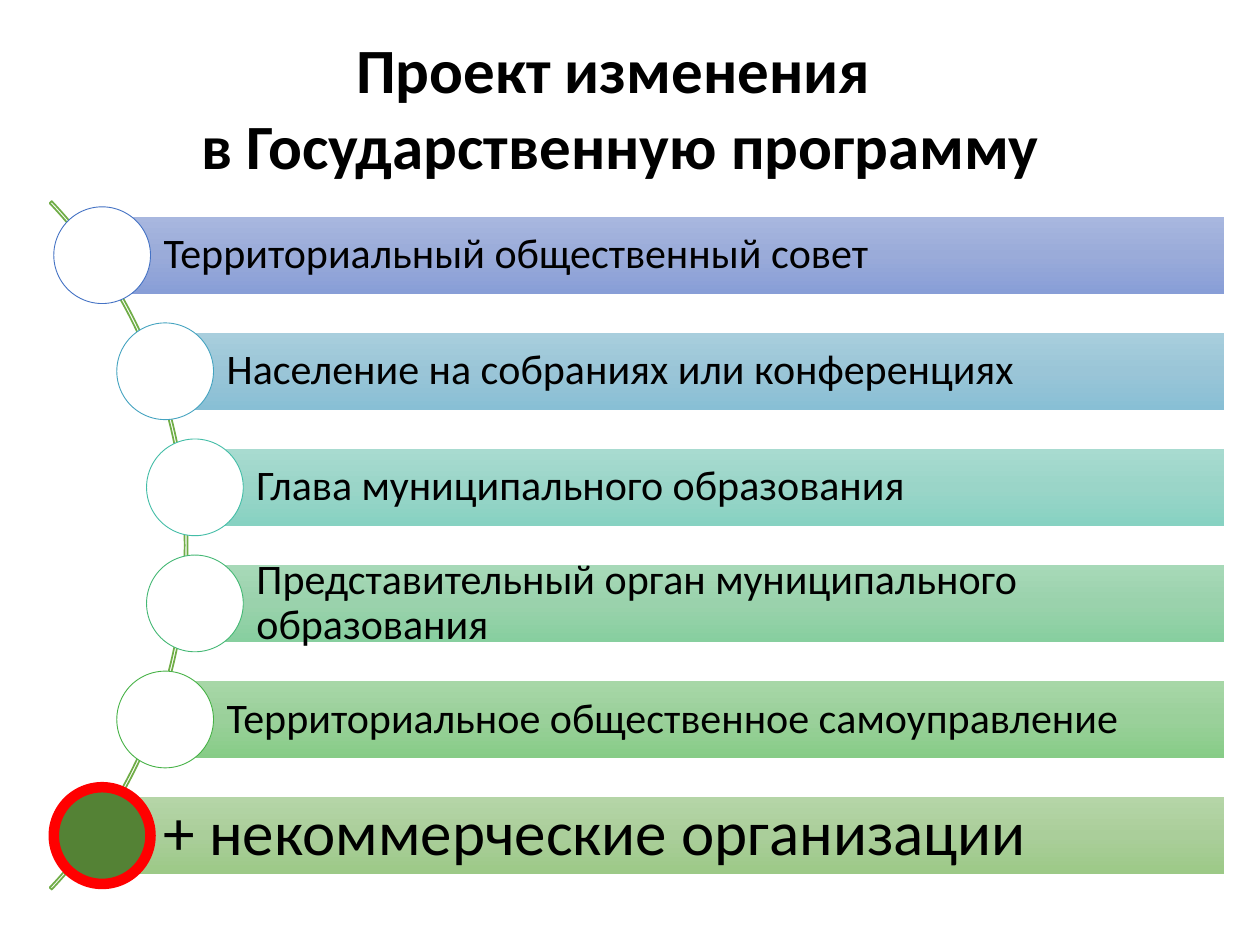
from copy import deepcopy

from pptx import Presentation
from pptx.dml.color import RGBColor
from pptx.enum.shapes import MSO_SHAPE
from pptx.enum.text import MSO_ANCHOR, MSO_AUTO_SIZE, PP_ALIGN
from pptx.oxml.ns import qn
from pptx.util import Cm, Pt

ARC, BAR, CIRCLE = MSO_SHAPE.BLOCK_ARC, MSO_SHAPE.RECTANGLE, MSO_SHAPE.OVAL
MIDDLE, GROW = MSO_ANCHOR.MIDDLE, MSO_AUTO_SIZE.SHAPE_TO_FIT_TEXT
LEFT, CENTER = PP_ALIGN.LEFT, PP_ALIGN.CENTER

TITLE = ["Проект изменения ", "в Государственную программу"]
PLAIN = {"size": 24, "inset": 0.18, "fill": "FFFFFF", "weight": 0.5}
ADDED = {"size": 36, "inset": 0.25, "fill": "548235", "weight": 6}
ITEMS = [
    ("Территориальный общественный совет", 2.06, ("A8B7DF", "9AABD9", "889ED7"), "4472C4", PLAIN),
    ("Население на собраниях или конференциях", 3.33, ("A8CEDD", "9AC5D7", "88BFD5"), "44A3C0", PLAIN),
    ("Глава муниципального образования", 3.93, ("A8DBD0", "9AD5C8", "87D2C2"), "43BDA7", PLAIN),
    ("Представительный орган муниципального образования", 3.93, ("A7D9B8", "9AD2AC", "87CF9F"), "44B874", PLAIN),
    ("Территориальное общественное самоуправление", 3.33, ("A7D7A7", "9AD09A", "87CC87"), "46B246", PLAIN),
    ("+ некоммерческие организации", 2.06, ("B5D5A7", "AACE9A", "9CC987"), "FF0000", ADDED),
]
FIRST_TOP, STEP, BAR_HEIGHT, BAR_RIGHT, DIAMETER = 4.37, 2.34, 1.55, 24.68, 1.95


def color(value):
    """Turn a hex string into a colour."""
    return RGBColor.from_string(value)


def apply(target, values):
    """Set every attribute named in a dict."""
    for name, value in values.items():
        setattr(target, name, value)


def write(paragraph, text, align, size, bold=False):
    """Fill a paragraph with formatted text."""
    paragraph.text = text
    paragraph.alignment = align
    apply(paragraph.font, {"name": "Calibri", "size": Pt(size), "bold": bold})
    paragraph.font.color.rgb = color("000000")


def add_shape(page, kind, left, top, width, height):
    """Add a preset shape without a shadow."""
    shape = page.shapes.add_shape(kind, Cm(left), Cm(top), Cm(width), Cm(height))
    shape.shadow.inherit = False
    return shape


def outline(shape, value, weight):
    """Give a shape a coloured line."""
    shape.line.color.rgb = color(value)
    shape.line.width = Pt(weight)


def shade(shape, colors):
    """Fill a shape with evenly spaced colours from top to bottom."""
    shape.fill.gradient()
    shape.fill.gradient_angle = 270
    stops = shape.fill._xPr.find(".//" + qn("a:gsLst"))
    stops.insert(1, deepcopy(stops[0]))
    for index, (stop, value) in enumerate(zip(shape.fill.gradient_stops, colors)):
        stop.position = index / (len(colors) - 1)
        stop.color.rgb = color(value)


def add_title(page):
    """Place and fill the title."""
    title = page.shapes.title
    apply(title, {"left": Cm(0.46), "top": Cm(0.48), "width": Cm(24.1), "height": Cm(3.33)})
    frame = title.text_frame
    apply(frame, {"word_wrap": True, "auto_size": GROW, "vertical_anchor": MIDDLE})
    for index, text in enumerate(TITLE):
        para = frame.add_paragraph() if index else frame.paragraphs[0]
        write(para, text, CENTER, 36, True)


def add_arc(page):
    """Draw the thin arc that links the circles."""
    arc = add_shape(page, ARC, -15.57, 1.04, 19.35, 19.91)
    for index, value in enumerate((189, 27, 0.003)):
        arc.adjustments[index] = value
    arc.fill.background()
    outline(arc, "70AD47", 1)


def add_item(page, top, text, left, colors, ring, style):
    """Draw one bar with a circle centred on its left edge."""
    bar = add_shape(page, BAR, left, top, BAR_RIGHT - left, BAR_HEIGHT)
    shade(bar, colors)
    bar.line.fill.background()
    inset = Cm(style["inset"])
    apply(bar.text_frame, {"word_wrap": True, "vertical_anchor": MIDDLE, "margin_left": Cm(1.24),
                           "margin_top": inset, "margin_right": inset, "margin_bottom": inset})
    para = bar.text_frame.paragraphs[0]
    write(para, text, LEFT, style["size"])
    para.line_spacing = 0.9
    circle = add_shape(page, CIRCLE, left - DIAMETER / 2, top + (BAR_HEIGHT - DIAMETER) / 2, DIAMETER, DIAMETER)
    circle.fill.solid()
    circle.fill.fore_color.rgb = color(style["fill"])
    outline(circle, ring, style["weight"])


def main():
    """Build the slide and save it."""
    deck = Presentation()
    apply(deck, {"slide_width": Cm(25.4), "slide_height": Cm(19.05)})
    page = deck.slides.add_slide(deck.slide_layouts[5])
    add_title(page)
    add_arc(page)
    for index, item in enumerate(ITEMS):
        add_item(page, FIRST_TOP + index * STEP, *item)
    deck.save("out.pptx")


if __name__ == "__main__":
    main()
